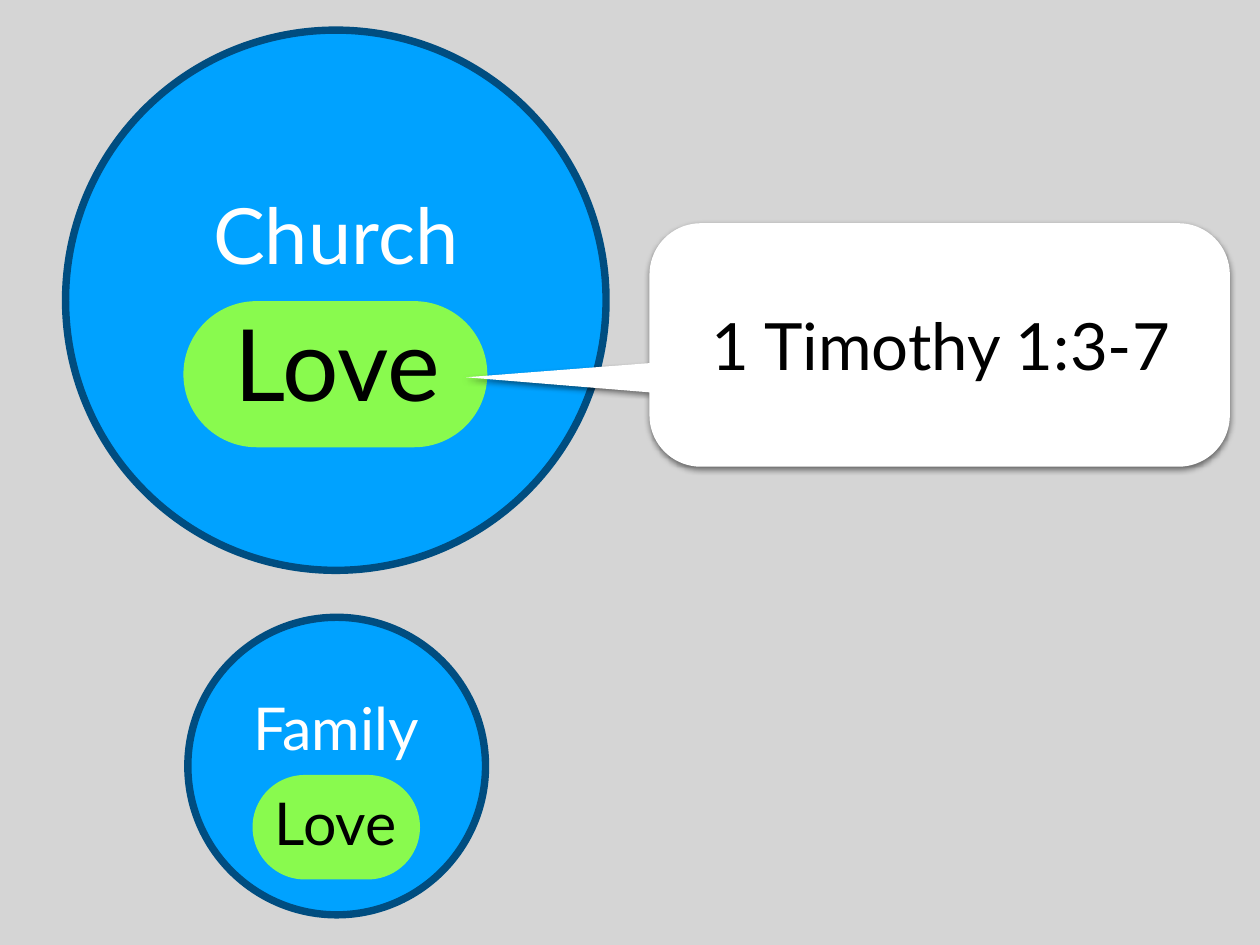
from math import cos, radians, sin

from lxml.etree import SubElement
from pptx import Presentation
from pptx.dml.color import RGBColor
from pptx.enum.shapes import MSO_SHAPE as Preset
from pptx.enum.text import MSO_ANCHOR as Anchor, MSO_AUTO_SIZE as AutoSize, PP_ALIGN as Align
from pptx.oxml.ns import qn
from pptx.util import Inches, Pt

COLORS = {
    "background": "D5D5D5",
    "circle": "00A2FF",
    "outline": "004D80",
    "pill": "89FA4E",
    "white": "FFFFFF",
    "black": "000000",
}


def color(name):
    """Return the named colour."""
    return RGBColor.from_string(COLORS[name])


def write_text(frame, text, font="Lato", size=48, fill="black", wrap=False):
    """Write one centred line of formatted text into a text frame."""
    frame.margin_left = frame.margin_right = Inches(0.06)
    frame.margin_top = frame.margin_bottom = Inches(0.06)
    frame.vertical_anchor = Anchor.MIDDLE
    frame.word_wrap = wrap
    frame.auto_size = AutoSize.SHAPE_TO_FIT_TEXT
    paragraph = frame.paragraphs[0]
    paragraph.alignment = Align.CENTER
    run = paragraph.add_run()
    run.text = text
    run.font.name = font
    run.font.size = Pt(size)
    run.font.color.rgb = color(fill)


class SlideBuilder:
    """Draws styled elements on one slide."""

    def __init__(self, slide):
        """Keep the slide and paint its background."""
        self.slide = slide
        self.outline_width = Pt(6)
        slide.background.fill.solid()
        slide.background.fill.fore_color.rgb = color("background")

    def paint(self, shape, fill):
        """Give a shape a plain fill without line or shadow."""
        shape.shadow.inherit = False
        shape.fill.solid()
        shape.fill.fore_color.rgb = color(fill)
        shape.line.fill.background()

    def circle(self, left, top, diameter):
        """Add an outlined circle."""
        shape = self.slide.shapes.add_shape(
            Preset.OVAL, Inches(left), Inches(top), Inches(diameter), Inches(diameter))
        self.paint(shape, "circle")
        shape.line.color.rgb = color("outline")
        shape.line.width = self.outline_width

    def pill(self, left, top, width, height):
        """Add a fully rounded rectangle."""
        shape = self.slide.shapes.add_shape(
            Preset.ROUNDED_RECTANGLE, Inches(left), Inches(top), Inches(width), Inches(height))
        shape.adjustments[0] = 0.5
        self.paint(shape, "pill")

    def label(self, left, top, width, height, text, **style):
        """Add a text box."""
        box = self.slide.shapes.add_textbox(
            Inches(left), Inches(top), Inches(width), Inches(height))
        write_text(box.text_frame, text, **style)

    def callout(self, left, top, right, bottom, radius, tail):
        """Add a rounded speech bubble whose tail leaves its left side."""
        corners = [
            (right - radius, top + radius, -90),
            (right - radius, bottom - radius, 0),
            (left + radius, bottom - radius, 90),
            (left + radius, top + radius, 180),
        ]
        arcs = [
            [(x + radius * cos(radians(start + step)), y + radius * sin(radians(start + step)))
             for step in range(0, 91, 5)]
            for x, y, start in corners
        ]
        outline = arcs[0] + arcs[1] + arcs[2] + tail + arcs[3]
        points = [(Inches(x), Inches(y)) for x, y in outline]
        builder = self.slide.shapes.build_freeform(*points[0])
        builder.add_line_segments(points[1:], close=True)
        shape = builder.convert_to_shape()
        self.paint(shape, "white")
        self.drop_shadow(shape)

    def drop_shadow(self, shape):
        """Add a soft shadow below a shape."""
        effects = shape.element.spPr.find(qn("a:effectLst"))
        shadow = SubElement(effects, qn("a:outerShdw"), blurRad=str(Pt(5)), dist=str(Pt(2)),
                            dir="5400000", rotWithShape="0")
        tint = SubElement(shadow, qn("a:srgbClr"), val=COLORS["black"])
        SubElement(tint, qn("a:alpha"), val="50000")


def main():
    """Build and save the presentation."""
    presentation = Presentation()
    presentation.slide_width = Inches(14.22)
    presentation.slide_height = Inches(10.67)
    builder = SlideBuilder(presentation.slides.add_slide(presentation.slide_layouts[6]))

    builder.circle(0.74, 0.34, 6.1)
    builder.circle(2.12, 6.97, 3.36)
    builder.label(2.26, 1.99, 3.06, 1.29, "Church", size=63, fill="white")
    builder.label(2.73, 7.7, 2.13, 1.01, "Family", fill="white")
    builder.pill(2.07, 3.4, 3.43, 1.65)
    builder.label(2.52, 3.26, 2.58, 1.65, "Love", size=81)
    builder.pill(2.85, 8.75, 1.89, 1.18)
    builder.label(3, 8.78, 1.58, 1.01, "Love")
    builder.callout(7.33, 2.52, 13.88, 5.27, radius=0.58,
                    tail=[(7.33, 4.43), (5.26, 4.26), (7.33, 4.1)])
    builder.label(7.89, 3.33, 5.46, 1.13, "1 Timothy 1:3-7", size=53, wrap=True)

    presentation.save("out.pptx")


if __name__ == "__main__":
    main()
